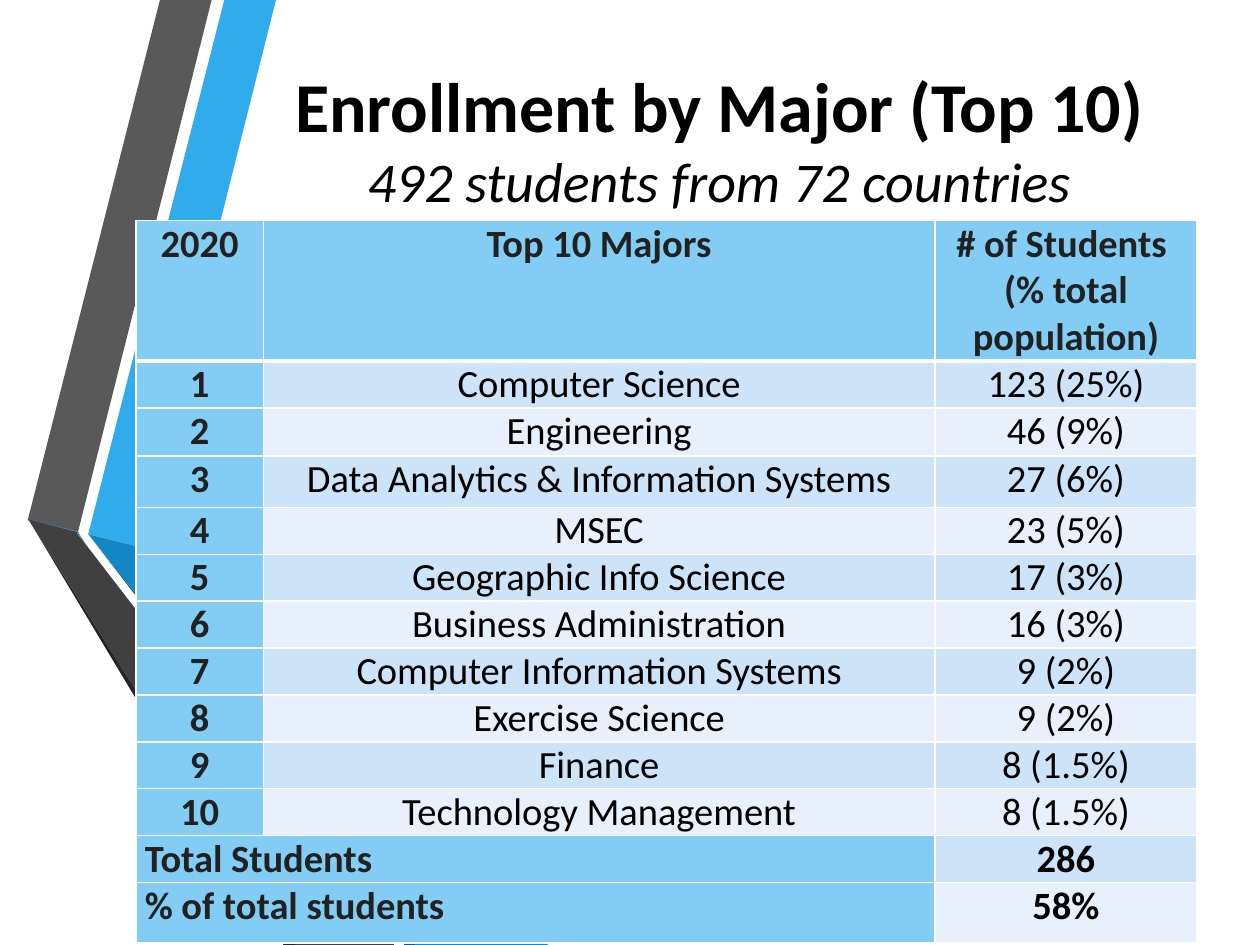
from lxml import etree
from pptx import Presentation
from pptx.dml.color import RGBColor as RGB
from pptx.enum.text import MSO_ANCHOR as Anchor, MSO_AUTO_SIZE as Fit, PP_ALIGN as Align
from pptx.oxml.ns import qn
from pptx.util import Inches, Pt

COLORS = {
    "blue": "30ACEC", "gray": "595959", "black": "262626", "navy": "0C5A82",
    "deep": "1287C3", "dark": "404040", "cyan": "29ABE2",
    "head": "83CDF4", "odd": "CDE3F8", "even": "E8F1FB",
    "label": "212121", "text": "000000", "line": "FFFFFF",
}


def color(name):
    return RGB.from_string(COLORS[name])


def border(cell, side, width):
    props = cell._tc.get_or_add_tcPr()
    line = etree.SubElement(props, qn(f"a:ln{side}"), w=str(Pt(width)))
    fill = etree.SubElement(line, qn("a:solidFill"))
    etree.SubElement(fill, qn("a:srgbClr"), val=COLORS["line"])


prs = Presentation()
prs.slide_width, prs.slide_height = Inches(10), Inches(7.5)
slide = prs.slides.add_slide(prs.slide_layouts[5])

# Folded ribbons on the left
ribbons = [
    ("blue", [(0.7, 4.24), (1.1, 4.34), (2.19, 0), (1.78, 0)]),
    ("gray", [(1.68, 0), (1.27, 0), (0.22, 4.13), (0.62, 4.22)]),
    ("black", [(0.23, 4.13), (2.25, 7.5), (2.35, 7.5)]),
    ("navy", [(3.3, 7.5), (0.71, 4.25), (3.21, 7.5)]),
    ("deep", [(0.7, 4.24), (0.71, 4.25), (3.3, 7.5), (4.35, 7.5), (1.1, 4.34)]),
    ("dark", [(3.13, 7.5), (0.68, 4.32), (0.61, 4.23), (0.62, 4.23), (0.68, 4.32),
              (0.63, 4.24), (0.62, 4.22), (0.61, 4.22), (0.22, 4.12), (0.23, 4.13),
              (2.35, 7.5)]),
    ("cyan", [(0.62, 4.22), (0.22, 4.12), (0.61, 4.22)]),
    ("cyan", [(0.61, 4.23), (0.68, 4.32), (0.62, 4.23)]),
]
for name, points in ribbons:
    dots = [(Inches(x), Inches(y)) for x, y in points]
    pen = slide.shapes.build_freeform(*dots[0])
    pen.add_line_segments(dots[1:], close=True)
    shape = pen.convert_to_shape()
    shape.shadow.inherit = False
    shape.fill.solid()
    shape.fill.fore_color.rgb = color(name)
    shape.line.fill.background()

# Enrollment table
majors = [
    ("Computer Science", "123 (25%)"),
    ("Engineering", "46 (9%)"),
    ("Data Analytics & Information Systems", "27 (6%)"),
    ("MSEC", "23 (5%)"),
    ("Geographic Info Science", "17 (3%)"),
    ("Business Administration", "16 (3%)"),
    ("Computer Information Systems", "9 (2%)"),
    ("Exercise Science", "9 (2%)"),
    ("Finance", "8 (1.5%)"),
    ("Technology Management", "8 (1.5%)"),
]
rows = [("2020", "Top 10 Majors", "# of Students \n(% total population)")]
rows += [(str(rank), *major) for rank, major in enumerate(majors, 1)]
rows += [("Total Students", "", "286"), ("% of total students", "", "58%")]
first_sum = len(majors) + 1

frame = slide.shapes.add_table(len(rows), 3, Inches(1.08), Inches(1.75),
                               Inches(8.42), Inches(5.67))
table = frame.table
for col, width in zip(table.columns, (1.01, 5.33, 2.08)):
    col.width = Inches(width)
heights = {0: 0.71, 2: 0.38, 3: 0.41, len(rows) - 1: 0.48}

for r, row in enumerate(rows):
    table.rows[r].height = Inches(heights.get(r, 0.35))
    total = r >= first_sum
    if total:
        table.cell(r, 0).merge(table.cell(r, 1))
    for c, text in enumerate(row):
        cell = table.cell(r, c)
        label = r == 0 or c == 0 or (total and c == 1)
        for side in "LRTB":
            thick = (r, side) in ((0, "B"), (1, "T"))
            border(cell, side, 3 if thick else 1)
        cell.fill.solid()
        cell.fill.fore_color.rgb = color("head" if label else "odd" if r % 2 else "even")
        cell.margin_left = cell.margin_right = Inches(0.07)
        cell.margin_top = cell.margin_bottom = 0
        cell.text = text
        for para in cell.text_frame.paragraphs:
            para.alignment = Align.LEFT if total and label else Align.CENTER
            para.font.name, para.font.size = "Calibri", Pt(22)
            para.font.bold = label or total
            para.font.color.rgb = color("label" if label else "text")

# Title and subtitle, in front of the table
title = slide.shapes.title
title.left, title.top = Inches(1.42), Inches(0.33)
title.width, title.height = Inches(8.58), Inches(1.42)
box = title.text_frame
box.text = "Enrollment by Major (Top 10)\n492 students from 72 countries"
box.word_wrap = True
box.auto_size = Fit.NONE
box.vertical_anchor = Anchor.BOTTOM
for para, size, bold in zip(box.paragraphs, (40, 32), (True, False)):
    para.alignment = Align.CENTER
    para.space_before = Pt(0)
    para.font.name, para.font.size = "Calibri", Pt(size)
    para.font.bold, para.font.italic = bold, not bold
    para.font.color.rgb = color("text")
title.element.getparent().append(title.element)

prs.save("out.pptx")
